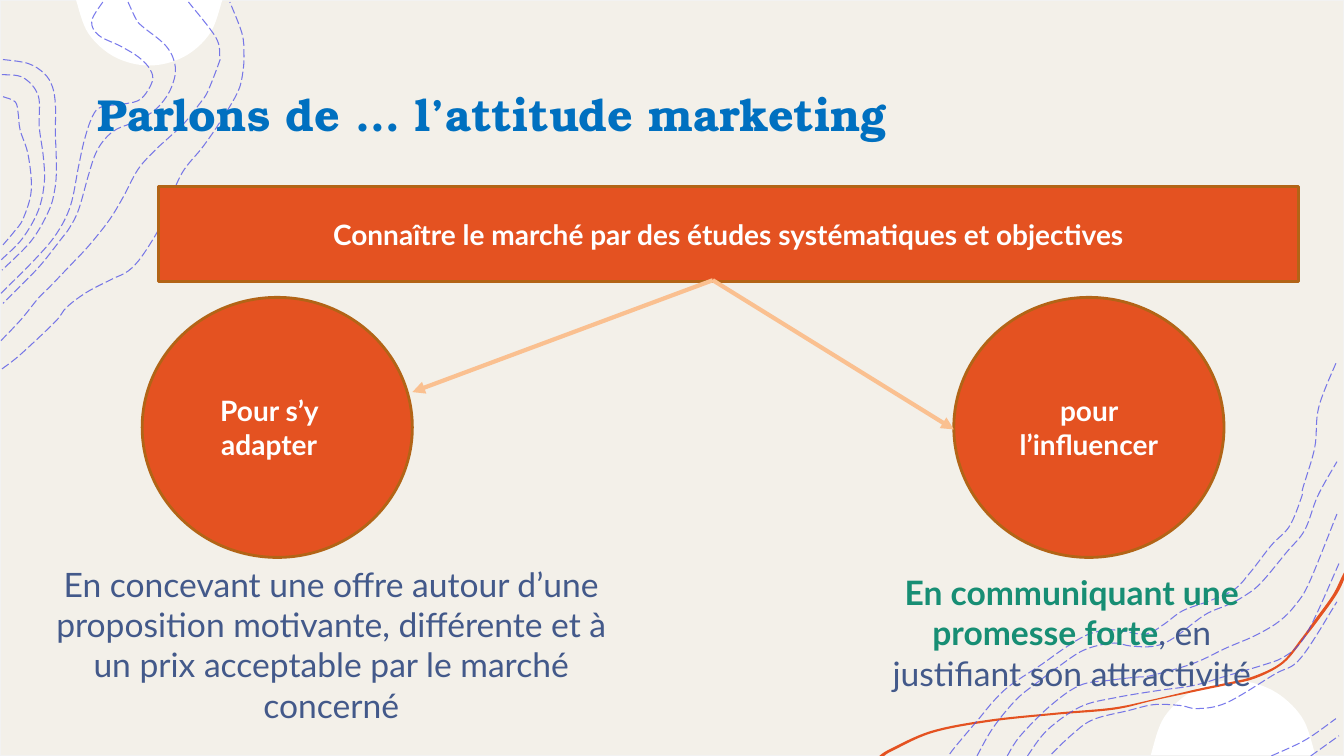
from math import asin, cos, pi, sin

from lxml import etree
from pptx import Presentation
from pptx.dml.color import RGBColor
from pptx.enum.dml import MSO_LINE
from pptx.enum.shapes import MSO_CONNECTOR, MSO_SHAPE
from pptx.enum.text import MSO_ANCHOR, PP_ALIGN
from pptx.oxml.ns import qn
from pptx.util import Inches, Pt

CREAM = RGBColor(0xF3, 0xF0, 0xE9)
PALE = RGBColor(0xF2, 0xF2, 0xF2)
WHITE = RGBColor(0xFF, 0xFF, 0xFF)
ORANGE = RGBColor(0xE4, 0x52, 0x21)
BROWN = RGBColor(0xB2, 0x64, 0x16)
PEACH = RGBColor(0xFA, 0xC0, 0x90)
VIOLET = RGBColor(0x4D, 0x4E, 0xE6)
BLUE = RGBColor(0x00, 0x70, 0xC0)
SLATE = RGBColor(0x43, 0x59, 0x8A)
GREEN = RGBColor(0x17, 0x8E, 0x74)

LEFT_WAVES = [
    [(0.02, 3.66), (0.2, 3.52), (0.55, 3.19), (0.66, 3.05), (0.86, 2.9), (1.11, 2.77), (1.27, 2.69),
     (1.41, 2.54), (1.6, 2.23), (1.67, 2.03), (1.81, 1.71), (2.01, 1.46), (2.19, 1.2), (2.36, 0.91),
     (2.41, 0.71), (2.42, 0.53), (2.4, 0.33), (2.28, 0.02)],
    [(0.01, 3.38), (0.21, 3.17), (0.38, 2.96), (0.5, 2.84), (0.73, 2.6), (0.88, 2.44), (1.08, 2.19),
     (1.22, 1.96), (1.37, 1.68), (1.54, 1.49), (1.67, 1.37), (1.83, 1.22), (1.98, 1.03), (2.06, 0.91),
     (2.17, 0.63), (2.18, 0.56), (2.14, 0.37), (1.87, 0.02)],
    [(1.27, 0.02), (1.35, 0.19), (1.41, 0.26), (1.65, 0.46), (1.74, 0.67), (1.69, 0.89), (1.55, 1.08),
     (1.36, 1.2), (1.16, 1.28), (1.04, 1.38), (0.95, 1.52), (0.88, 1.73), (0.78, 2.08), (0.69, 2.26),
     (0.6, 2.38), (0.42, 2.61), (0.28, 2.76), (0.03, 3.01)],
    [(0.01, 2.91), (0.35, 2.57), (0.56, 2.32), (0.7, 2.04), (0.78, 1.65), (0.84, 1.38), (0.92, 1.15),
     (1.01, 1.06), (1.24, 1.03), (1.4, 0.98), (1.51, 0.81), (1.49, 0.69), (1.38, 0.57), (1.2, 0.46),
     (0.98, 0.35), (0.91, 0.21), (1.02, 0.02)],
    [(0.03, 0.59), (0.28, 0.63), (0.44, 0.73), (0.52, 0.86), (0.55, 1.04), (0.55, 1.32), (0.56, 1.68),
     (0.54, 1.9), (0.48, 2.1), (0.31, 2.39), (0.02, 2.68)],
    [(0.02, 0.74), (0.23, 0.77), (0.38, 0.95), (0.39, 1.26), (0.43, 1.55), (0.44, 1.81), (0.38, 2.09),
     (0.22, 2.37), (0.01, 2.58)],
    [(0.03, 0.96), (0.15, 1.01), (0.18, 1.12), (0.2, 1.29), (0.28, 1.54), (0.31, 1.89), (0.23, 2.17),
     (0.14, 2.3), (0.03, 2.43)],
]
RIGHT_WAVES = [
    [(9.42, 7.48), (9.49, 7.39), (9.71, 7.13), (9.86, 6.95), (10.02, 6.8), (10.32, 6.6), (10.56, 6.43),
     (10.78, 6.3), (10.98, 6.25), (11.13, 6.26), (11.37, 6.29), (11.55, 6.19), (11.73, 6.06), (12, 5.96),
     (12.24, 5.85), (12.4, 5.68), (12.61, 5.41), (12.79, 5.22), (12.91, 4.93), (12.92, 4.85),
     (13.04, 4.44), (13.08, 4.04), (13.26, 3.58)],
    [(9.69, 7.5), (9.85, 7.22), (10.08, 6.94), (10.29, 6.77), (10.49, 6.62), (10.75, 6.45), (11.03, 6.38),
     (11.22, 6.41), (11.45, 6.41), (11.64, 6.33), (11.95, 6.1), (12.18, 6), (12.33, 5.92), (12.5, 5.79),
     (12.76, 5.48), (12.94, 5.26), (13.07, 4.92), (13.26, 4.58)],
    [(13, 7.5), (13.28, 7.3)],
    [(12.61, 7.5), (12.95, 7.34), (13.25, 7.13)],
    [(10.43, 7.48), (10.63, 7.29), (10.84, 7.14), (11.19, 7.05), (11.45, 6.99), (11.71, 7), (11.88, 7.03),
     (12.17, 6.97), (12.64, 6.69), (12.9, 6.53), (13.26, 5.97)],
    [(10.19, 7.5), (10.39, 7.24), (10.72, 7.01), (11.07, 6.92), (11.49, 6.85), (11.84, 6.8), (12.15, 6.71),
     (12.52, 6.6), (12.71, 6.53), (12.88, 6.4), (13.03, 6.15), (13.28, 5.59)],
    [(9.99, 7.5), (10.12, 7.3), (10.42, 7), (10.71, 6.8), (11, 6.75), (11.25, 6.72), (11.43, 6.7),
     (11.84, 6.58), (12.16, 6.43), (12.44, 6.31), (12.68, 6.17), (12.85, 6), (12.99, 5.77), (13.26, 5.1)],
]
RIBBON = [
    (8.72, 7.5), (8.83, 7.43), (9.24, 7.25), (9.81, 7.14), (10.48, 7.07), (11.04, 7.02), (11.43, 6.94),
    (11.9, 6.83), (12.14, 6.78), (12.43, 6.71), (12.71, 6.57), (12.91, 6.33), (13.04, 6.15), (13.22, 5.9),
    (13.33, 5.68), (13.33, 5.75), (13.25, 5.91), (13.07, 6.16), (12.93, 6.34), (12.73, 6.58), (12.45, 6.73),
    (12.15, 6.8), (11.91, 6.85), (11.44, 6.95), (11.05, 7.04), (10.48, 7.09), (9.82, 7.16), (9.25, 7.27),
    (8.85, 7.45), (8.77, 7.5)]

prs = Presentation()
prs.slide_width, prs.slide_height = Inches(13.33), Inches(7.5)
s = prs.slides.add_slide(prs.slide_layouts[5])


def add_curve(points, close):
    pts = [(Inches(x), Inches(y)) for x, y in points]
    fb = s.shapes.build_freeform(*pts[0], scale=1.0)
    fb.add_line_segments(pts[1:], close=close)
    sp = fb.convert_to_shape()
    sp.shadow.inherit = False
    knots = [(int(pt.get("x")), int(pt.get("y"))) for pt in sp.element.iter(qn("a:pt"))]
    ends = [knots[0]] + knots + [knots[-1]]
    for seg, a, b, c, d in zip(list(sp.element.iter(qn("a:lnTo"))), ends, ends[1:], ends[2:], ends[3:]):
        bez = etree.Element(qn("a:cubicBezTo"))
        handles = [[b[k] + (c[k] - a[k]) / 6 for k in (0, 1)], [c[k] - (d[k] - b[k]) / 6 for k in (0, 1)], c]
        for x, y in handles:
            etree.SubElement(bez, qn("a:pt"), x=str(round(x)), y=str(round(y)))
        seg.getparent().replace(seg, bez)
    return sp


def write(tf, runs, size, font="Lato", align=PP_ALIGN.CENTER):
    tf.word_wrap = True
    tf.vertical_anchor = MSO_ANCHOR.MIDDLE
    tf.margin_left = tf.margin_right = tf.margin_top = tf.margin_bottom = Inches(0.05)
    p = tf.paragraphs[0]
    p.alignment = align
    for text, color, bold in runs:
        r = p.add_run()
        r.text = text
        r.font.name, r.font.size, r.font.bold = font, Pt(size), bold
        r.font.color.rgb = color


backdrop = s.shapes.add_shape(MSO_SHAPE.RECTANGLE, 0, 0, prs.slide_width, prs.slide_height)
backdrop.shadow.inherit = False
backdrop.fill.solid()
backdrop.fill.fore_color.rgb = CREAM
backdrop.line.color.rgb, backdrop.line.width = PALE, Pt(1)

blobs = [(RIBBON, ORANGE)]
for cx, cy, radius, side in [(1.48, -0.08, 0.73, 1), (12.23, 7.57, 0.82, -1)]:
    start = asin(0.08 / radius)
    angles = [start + (pi - 2 * start) * i / 6 for i in range(7)]
    blobs.insert(-1, ([(cx + radius * cos(a), cy + side * radius * sin(a)) for a in angles], WHITE))
for points, color in blobs:
    sp = add_curve(points, True)
    sp.fill.solid()
    sp.fill.fore_color.rgb = color
    sp.line.fill.background()

for wave in LEFT_WAVES + RIGHT_WAVES:
    sp = add_curve(wave, False)
    sp.fill.background()
    sp.line.color.rgb, sp.line.width = VIOLET, Pt(0.75)
    sp.line.dash_style = MSO_LINE.LONG_DASH
    color = sp.element.spPr.find(qn("a:ln")).find(".//" + qn("a:srgbClr"))
    etree.SubElement(color, qn("a:alpha"), val="75000")

title = s.shapes.title
title.element.getparent().append(title.element)
title.left, title.top, title.width, title.height = Inches(0.92), Inches(0.83), Inches(11.5), Inches(0.59)
write(title.text_frame, [("Parlons de … l’attitude marketing", BLUE, True)], 32, "TeX Gyre Bonum", PP_ALIGN.LEFT)

for kind, x, y, w, h, text, right in [
    (MSO_SHAPE.RECTANGLE, 1.57, 1.85, 11.31, 0.94,
     "Connaître le marché par des études systématiques et objectives", 0.05),
    (MSO_SHAPE.OVAL, 1.41, 2.95, 2.68, 2.58, "Pour s’y adapter", 0.21),
    (MSO_SHAPE.OVAL, 9.46, 2.95, 2.68, 2.58, "pour l’influencer", 0.05),
]:
    sp = s.shapes.add_shape(kind, Inches(x), Inches(y), Inches(w), Inches(h))
    sp.shadow.inherit = False
    sp.fill.solid()
    sp.fill.fore_color.rgb = ORANGE
    sp.line.color.rgb, sp.line.width = BROWN, Pt(2)
    write(sp.text_frame, [(text, WHITE, True)], 20)
    sp.text_frame.margin_right = Inches(right)

for x, y, w, h, runs in [
    (8.65, 5.62, 3.96, 1.31, [("En communiquant une promesse forte", GREEN, True),
                              (", en justifiant son attractivité", SLATE, False)]),
    (0.43, 5.53, 5.71, 1.72, [("En concevant une offre autour d’une proposition motivante, "
                               "différente et à un prix acceptable par le marché concerné", SLATE, False)]),
]:
    sp = s.shapes.add_textbox(Inches(x), Inches(y), Inches(w), Inches(h))
    write(sp.text_frame, runs, 24)

for x, y in [(9.46, 4.26), (4.09, 3.89)]:
    arrow = s.shapes.add_connector(MSO_CONNECTOR.STRAIGHT, Inches(7.07), Inches(2.78), Inches(x), Inches(y))
    arrow.line.color.rgb, arrow.line.width = PEACH, Pt(3)
    etree.SubElement(arrow.element.spPr.find(qn("a:ln")), qn("a:tailEnd"), type="triangle")
    etree.SubElement(arrow.element.spPr, qn("a:effectLst"))

prs.save("out.pptx")
